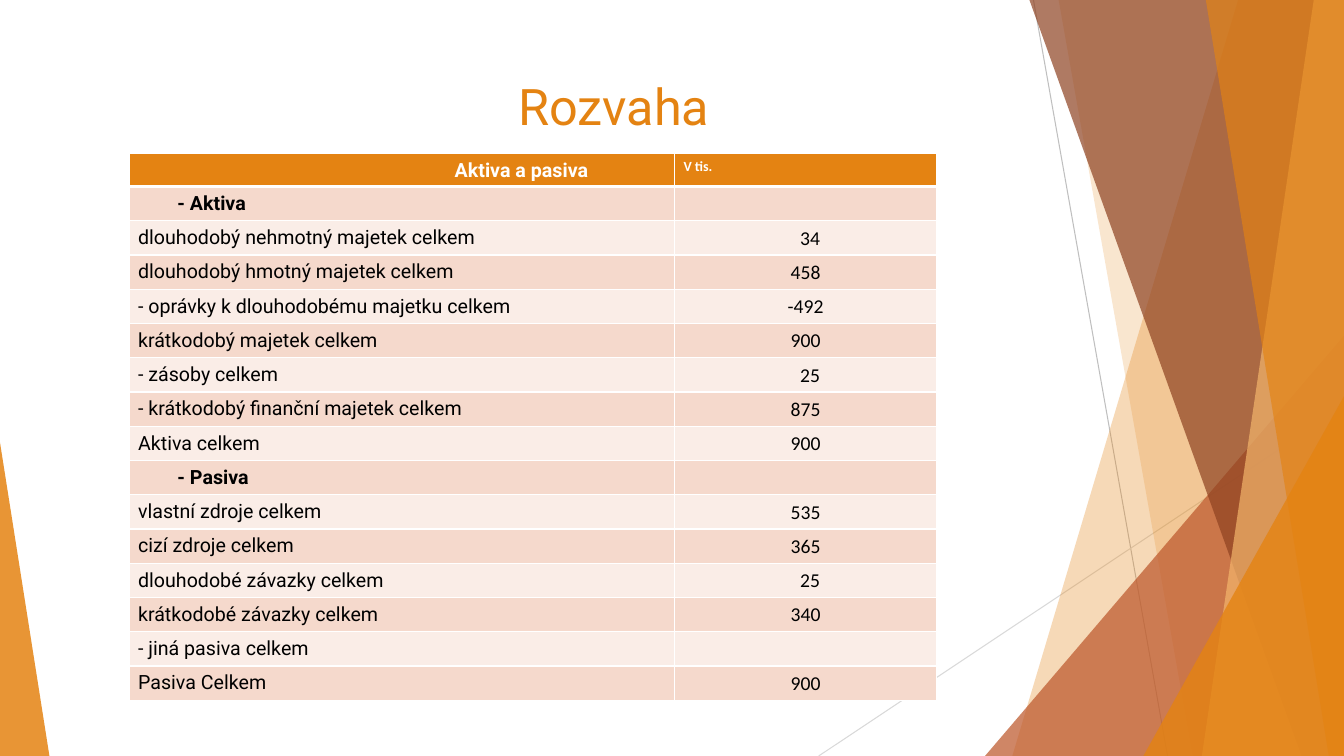
from lxml.etree import SubElement
from pptx import Presentation
from pptx.dml.color import RGBColor
from pptx.enum.shapes import MSO_CONNECTOR as CONN, MSO_SHAPE as SHAPE
from pptx.enum.text import PP_ALIGN as ALIGN
from pptx.oxml import parse_xml
from pptx.oxml.ns import nsdecls, qn
from pptx.util import Inches, Pt

W, H = 13.33, 7.5
ORANGE, WHITE, BLACK = "E48312", "FFFFFF", "000000"
BANDS = ("FAEDE7", "F5D9CC")
TITLE = "Rozvaha"
HEADER = ("Aktiva a pasiva", "V tis.")
ROWS = [
    ("- Aktiva", ""),
    ("dlouhodobý nehmotný majetek celkem", "34"),
    ("dlouhodobý hmotný majetek celkem", "458"),
    ("- oprávky k dlouhodobému majetku celkem", "-492"),
    ("krátkodobý majetek celkem", "900"),
    ("- zásoby celkem", "25"),
    ("- krátkodobý finanční majetek celkem", "875"),
    ("Aktiva celkem", "900"),
    ("- Pasiva", ""),
    ("vlastní zdroje celkem", "535"),
    ("cizí zdroje celkem", "365"),
    ("dlouhodobé závazky celkem", "25"),
    ("krátkodobé závazky celkem", "340"),
    ("- jiná pasiva celkem", ""),
    ("Pasiva Celkem", "900"),
]
SECTIONS = ("- Aktiva", "- Pasiva")
COLS = (5.41, 2.6)
HEAD_H, ROW_H = 0.32, 0.34
PAD, HEAD_INDENT, SECTION_INDENT, DIGIT_INDENT = 0.09, 3.14, 0.39, 0.09

LINES = [((10.25, 0), (11.58, H), "BFBFBF"), ((W, 4.03), (8.12, H), "D9D9D9")]
DECOR = [
    ("panel", (12.28, 10.04), ORANGE, 30),
    ("panel", (10.5, 11.83), ORANGE, 20),
    ("triangle", (9.77, 3.33, 3.56, 1), "BD582C", 72),
    ("panel", (10.21, 12.91), "8E4221", 70),
    ("panel", (13.03, 11.92), "F3B56C", 70),
    ("panel", (11.96, 13.18), ORANGE, 65),
    ("triangle", (11.34, 3.93, 1.99, 1), ORANGE, 80),
    ("triangle", (0, 4.39, 0.49, 0), ORANGE, 85),
]


def rgb(code):
    return RGBColor.from_string(code)


def panel(s, top_x, bottom_x):
    pts = [(Inches(x), Inches(y)) for x, y in ((top_x, 0), (W, 0), (W, H), (bottom_x, H))]
    fb = s.shapes.build_freeform(*pts[0], scale=1.0)
    fb.add_line_segments(pts[1:], close=True)
    return fb.convert_to_shape()


def triangle(s, x, y, w, apex):
    sp = s.shapes.add_shape(SHAPE.ISOSCELES_TRIANGLE, Inches(x), Inches(y), Inches(w), Inches(H - y))
    sp.adjustments[0] = apex
    return sp


def paint(sp, color, alpha):
    sp.shadow.inherit = False
    sp.line.fill.background()
    sp.fill.solid()
    sp.fill.fore_color.rgb = rgb(color)
    clr = sp._element.spPr.find(qn("a:solidFill"))[0]
    SubElement(clr, qn("a:alpha"), val=str(alpha * 1000))


def write(p, text, color, **fmt):
    r = p.add_run()
    r.text = text
    r.font.color.rgb = rgb(color)
    for name, value in fmt.items():
        setattr(r.font, name, value)


def borders(cell, **widths):
    tc_pr = cell._tc.get_or_add_tcPr()
    for i, side in enumerate("LRTB"):
        width = Pt(widths.get(side, 1))
        tc_pr.insert(i, parse_xml(
            f'<a:ln{side} {nsdecls("a")} w="{width}"><a:solidFill>'
            f'<a:srgbClr val="{WHITE}"/></a:solidFill></a:ln{side}>'))


def fill_cell(cell, text, fill, indent=0, align=ALIGN.LEFT, color=BLACK, **fmt):
    cell.fill.solid()
    cell.fill.fore_color.rgb = rgb(fill)
    margins = {"left": PAD + indent, "right": PAD, "top": 0.04, "bottom": 0.04}
    for side, value in margins.items():
        setattr(cell, f"margin_{side}", Inches(value))
    p = cell.text_frame.paragraphs[0]
    p.alignment, p.line_spacing = align, 1.07
    if text:
        write(p, text, color, **fmt)
    else:
        SubElement(p._p, qn("a:endParaRPr"), sz="1400")


prs = Presentation()
prs.slide_width, prs.slide_height = Inches(W), Inches(H)
s = prs.slides.add_slide(prs.slide_layouts[6])

for start, end, color in LINES:
    ln = s.shapes.add_connector(CONN.STRAIGHT, *map(Inches, start + end))
    ln.line.color.rgb = rgb(color)
    ln.line.width = Pt(0.75)
    SubElement(ln._element.spPr, qn("a:effectLst"))

makers = {"panel": panel, "triangle": triangle}
for kind, geometry, color, alpha in DECOR:
    paint(makers[kind](s, *geometry), color, alpha)

tf = s.shapes.add_textbox(Inches(1.28), Inches(0.7), Inches(9.62), Inches(1.42)).text_frame
tf.word_wrap = True
tf.paragraphs[0].alignment = ALIGN.CENTER
write(tf.paragraphs[0], TITLE, ORANGE, size=Pt(36), name="Roboto")

table = s.shapes.add_table(len(ROWS) + 1, 2, Inches(1.28), Inches(1.52), Inches(sum(COLS)),
                           Inches(HEAD_H + ROW_H * len(ROWS))).table
table.horz_banding = False
for col, width in zip(table.columns, COLS):
    col.width = Inches(width)
for i, row in enumerate(table.rows):
    row.height = Inches(ROW_H if i else HEAD_H)

head_formats = [
    {"indent": HEAD_INDENT, "size": Pt(14), "name": "Roboto"},
    {"size": Pt(10), "name": "Calibri"},
]
for j, (text, fmt) in enumerate(zip(HEADER, head_formats)):
    cell = table.cell(0, j)
    fill_cell(cell, text, ORANGE, color=WHITE, bold=True, **fmt)
    borders(cell, B=3)

for i, (label, value) in enumerate(ROWS, 1):
    band = BANDS[i % 2]
    section = label in SECTIONS
    fill_cell(table.cell(i, 0), label, band, SECTION_INDENT if section else 0,
              size=Pt(14), name="Roboto", bold=section)
    fill_cell(table.cell(i, 1), value, band, DIGIT_INDENT if len(value) == 2 else 0,
              ALIGN.CENTER, size=Pt(14), name="Calibri", bold=False)
    for j in range(2):
        borders(table.cell(i, j), T=3 if i == 1 else 1)

prs.save("out.pptx")
